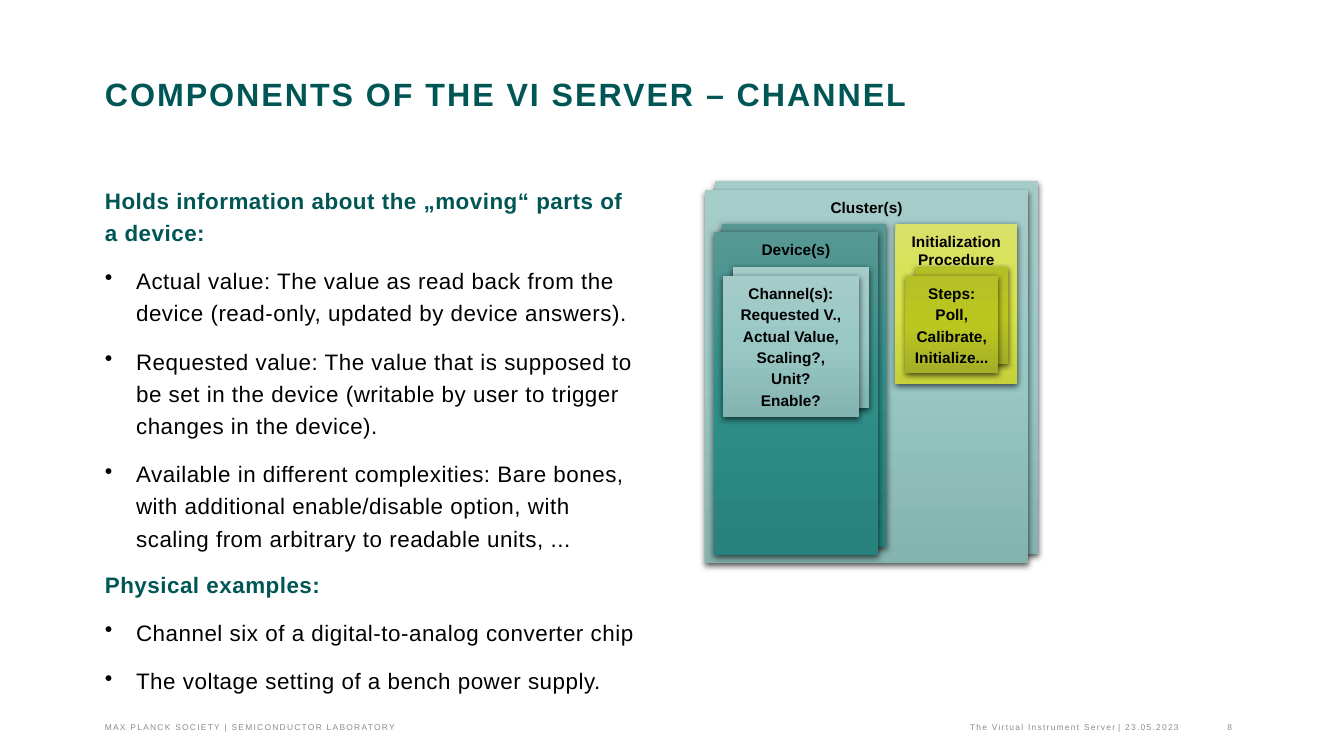
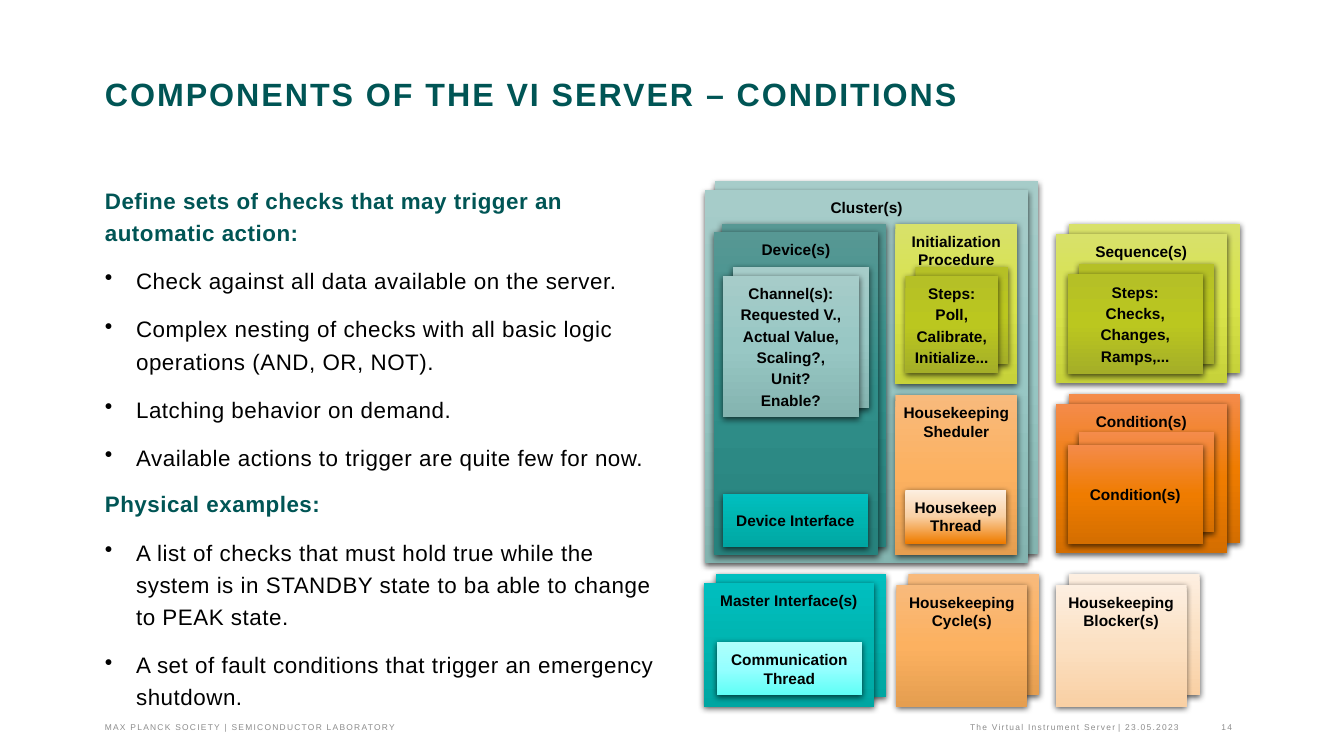
from lxml import etree
from pptx import Presentation
from pptx.dml.color import RGBColor
from pptx.enum.shapes import MSO_SHAPE
from pptx.enum.text import MSO_ANCHOR, PP_ALIGN
from pptx.oxml.ns import qn
from pptx.util import Inches, Pt

RECT = MSO_SHAPE.RECTANGLE
TOP, MID, LOW = MSO_ANCHOR.TOP, MSO_ANCHOR.MIDDLE, MSO_ANCHOR.BOTTOM
LEFT, MIDST, RIGHT = PP_ALIGN.LEFT, PP_ALIGN.CENTER, PP_ALIGN.RIGHT
FONT = "Arial"
INK = {"head": "005555", "text": "000000", "foot": "8C8C8C"}
TONES = {
    "mist": ("A6CCC9", "98C7C4", "84B4B0"),
    "teal": ("579894", "308E89", "27827D"),
    "aqua": ("00BFBF", "00B4B0", "00A6A2"),
    "ice": ("AFFFFB", "95FFFF", "5EFFF6"),
    "lime": ("D8E16A", "D8E34A", "C7D23A"),
    "olive": ("B5C026", "BBC71F", "A4AE28"),
    "peach": ("F8BA7C", "FCB160", "E59E50"),
    "cream": ("FDEFE1", "FBE0C2", "F9D0A4"),
    "fire": ("F48B4B", "EF7C00", "D46E00"),
    "glow": ("FDEFE1", "F9D0A4", "EF7C00"),
}
PAGE = (13.33, 7.5)
TITLE = (1.04, 0.76, 11.26, 1.05)
FOOT = (1.04, 7.06, 11.26, 0.2)
CLUSTER = (6.99, 1.89, 3.21, 3.7)
MASTER = (6.98, 5.78, 1.69, 1.23)
CYCLE = (8.89, 5.8, 1.3, 1.21)
BLOCKER = (10.47, 5.8, 1.3, 1.21)
SEQUENCE = (10.47, 2.32, 1.7, 1.48)
CONDITION = (10.47, 4.01, 1.7, 1.48)


def within(box, x, y, w, h):
    return box[0] + x, box[1] + y, w, h


def style(para, size, ink, bold=False, track=0):
    for run in para.runs:
        font = run.font
        font.name, font.size, font.bold = FONT, Pt(size), bold
        font.color.rgb = RGBColor.from_string(INK[ink])
        if track:
            run._r.get_or_add_rPr().set("spc", str(round(track * 100)))


def frame(shape, anchor=TOP, pad=(0, 0)):
    text = shape.text_frame
    text.word_wrap = True
    text.vertical_anchor = anchor
    text.margin_left = text.margin_right = Inches(pad[0])
    text.margin_top = text.margin_bottom = Inches(pad[1])
    return text


def label(slide, box, words, anchor=TOP):
    text = frame(slide.shapes.add_textbox(*map(Inches, box)), anchor)
    text.text = words
    return text.paragraphs[0]


def heading(slide, box, words):
    para = label(slide, box, words)
    para.line_spacing = Pt(26)
    style(para, 23, "head", True, 1.4)


def footer(slide, box, number):
    parts = (
        (0, 2.93, "MAX PLANCK SOCIETY | SEMICONDUCTOR LABORATORY", LEFT),
        (2.93, 7.09, "The Virtual Instrument Server", RIGHT),
        (10.05, 0.05, "|", LEFT),
        (10.12, 0.68, "23.05.2023", LEFT),
        (10.82, 0.36, number, RIGHT),
    )
    for x, wide, words, align in parts:
        para = label(slide, within(box, x, 0, wide, box[3]), words, LOW)
        para.alignment = align
        style(para, 6, "foot", track=0.9)


def body(slide, box, parts):
    text = frame(slide.shapes.add_textbox(*map(Inches, box)))
    rows = []
    for head, items in parts:
        rows += [(head, False)] + [(item, True) for item in items]
    for i, (words, point) in enumerate(rows):
        para = text.add_paragraph() if i else text.paragraphs[0]
        para.text = words
        para.line_spacing = Pt(23)
        if i:
            para.space_before = Pt(11.5 if point else 10)
        if point:
            props = para._p.get_or_add_pPr()
            props.set("marL", str(Inches(0.31)))
            props.set("indent", str(-Inches(0.31)))
            etree.SubElement(props, qn("a:buChar")).set("char", "•")
        style(para, 16, "text" if point else "head", not point, 0.4)


def shade(shape, tone):
    grad = etree.Element(qn("a:gradFill"), rotWithShape="1")
    stops = etree.SubElement(grad, qn("a:gsLst"))
    for i, code in enumerate(TONES[tone]):
        stop = etree.SubElement(stops, qn("a:gs"), pos=str(i * 50000))
        etree.SubElement(stop, qn("a:srgbClr"), val=code)
    etree.SubElement(grad, qn("a:lin"), ang="5400000", scaled="0")
    props = shape._element.spPr
    props.find(qn("a:prstGeom")).addnext(grad)
    shape.line.fill.background()
    shape.shadow.inherit = False
    drop = etree.SubElement(
        props.find(qn("a:effectLst")), qn("a:outerShdw"),
        blurRad=str(Pt(4.5)), dist=str(Pt(1.5)), dir="5400000", rotWithShape="0")
    black = etree.SubElement(drop, qn("a:srgbClr"), val="000000")
    etree.SubElement(black, qn("a:alpha"), val="63000")


def card(slide, box, tone, lines=(), anchor=TOP):
    shape = slide.shapes.add_shape(RECT, *map(Inches, box))
    shade(shape, tone)
    text = frame(shape, anchor, (0.07, 0.08))
    for i, words in enumerate(lines):
        para = text.add_paragraph() if i else text.paragraphs[0]
        para.text = words
        para.alignment = MIDST
        if i:
            para.space_before = Pt(2)
        style(para, 11, "text", True)


def stack(slide, box, tone, lines, shift=(0.1, 0.09), anchor=TOP):
    card(slide, within(box, shift[0], -shift[1], *box[2:]), tone)
    card(slide, box, tone, lines, anchor)


def cluster(slide, box):
    stack(slide, box, "mist", ["Cluster(s)"])
    stack(slide, within(box, 0.09, 0.41, 1.63, 3.21), "teal", ["Device(s)"], (0.08, 0.08))
    stack(slide, within(box, 0.18, 0.85, 1.35, 1.4), "mist",
          ["Channel(s):", "Requested V.,", "Actual Value,", "Scaling?,", "Unit?", "Enable?"])
    card(slide, within(box, 1.89, 0.33, 1.21, 1.59), "lime", ["Initialization Procedure"])
    stack(slide, within(box, 1.99, 0.85, 0.92, 0.96), "olive",
          ["Steps:", "Poll,", "Calibrate,", "Initialize..."])


def extras(slide, box):
    card(slide, within(box, 0.18, 3.01, 1.44, 0.53), "aqua", ["Device Interface"], MID)
    card(slide, within(box, 1.89, 2.03, 1.21, 1.59), "peach", ["Housekeeping Sheduler"])
    card(slide, within(box, 1.99, 2.97, 1, 0.53), "glow", ["Housekeep Thread"], MID)


def master(slide, box):
    stack(slide, box, "aqua", ["Master Interface(s)"], (0.12, 0.09))
    card(slide, within(box, 0.13, 0.59, 1.44, 0.53), "ice", ["Communication Thread"], MID)


def nest(slide, box, tones, title, lines, top, rise):
    stack(slide, box, tones[0], [title], (0.13, 0.1))
    stack(slide, within(box, 0.12, top, 1.34, 0.99), tones[1], lines, (0.11, rise), MID)


def base(deck, topic, number, wide, parts):
    slide = deck.slides.add_slide(deck.slide_layouts[6])
    heading(slide, TITLE, "COMPONENTS OF THE VI SERVER – " + topic)
    body(slide, (1.04, 1.8, wide, 5.2), parts)
    footer(slide, FOOT, number)
    cluster(slide, CLUSTER)
    return slide


def channel(deck):
    base(deck, "CHANNEL", "8", 5.31, (
        ("Holds information about the „moving“ parts of a device:", (
            "Actual value: The value as read back from the device (read-only, updated by device answers).",
            "Requested value: The value that is supposed to be set in the device (writable by user to trigger changes in the device).",
            "Available in different complexities: Bare bones, with additional enable/disable option, with scaling from arbitrary to readable units, ...")),
        ("Physical examples:", (
            "Channel six of a digital-to-analog converter chip",
            "The voltage setting of a bench power supply.")),
    ))


def conditions(deck):
    slide = base(deck, "CONDITIONS", "14", 5.49, (
        ("Define sets of checks that may trigger an automatic action:", (
            "Check against all data available on the server.",
            "Complex nesting of checks with all basic logic operations (AND, OR, NOT).",
            "Latching behavior on demand.",
            "Available actions to trigger are quite few for now.")),
        ("Physical examples:", (
            "A list of checks that must hold true while the system is in STANDBY state to ba able to change to PEAK state.",
            "A set of fault conditions that trigger an emergency shutdown.")),
    ))
    extras(slide, CLUSTER)
    master(slide, MASTER)
    stack(slide, CYCLE, "peach", ["Housekeeping Cycle(s)"], (0.12, 0.11))
    stack(slide, BLOCKER, "cream", ["Housekeeping Blocker(s)"], (0.13, 0.11))
    nest(slide, SEQUENCE, ("lime", "olive"), "Sequence(s)",
         ["Steps:", "Checks,", "Changes,", "Ramps,..."], 0.4, 0.1)
    nest(slide, CONDITION, ("fire", "fire"), "Condition(s)", ["Condition(s)"], 0.4, 0.12)


def main():
    deck = Presentation()
    deck.slide_width, deck.slide_height = map(Inches, PAGE)
    channel(deck)
    conditions(deck)
    deck.save("out.pptx")


if __name__ == "__main__":
    main()
